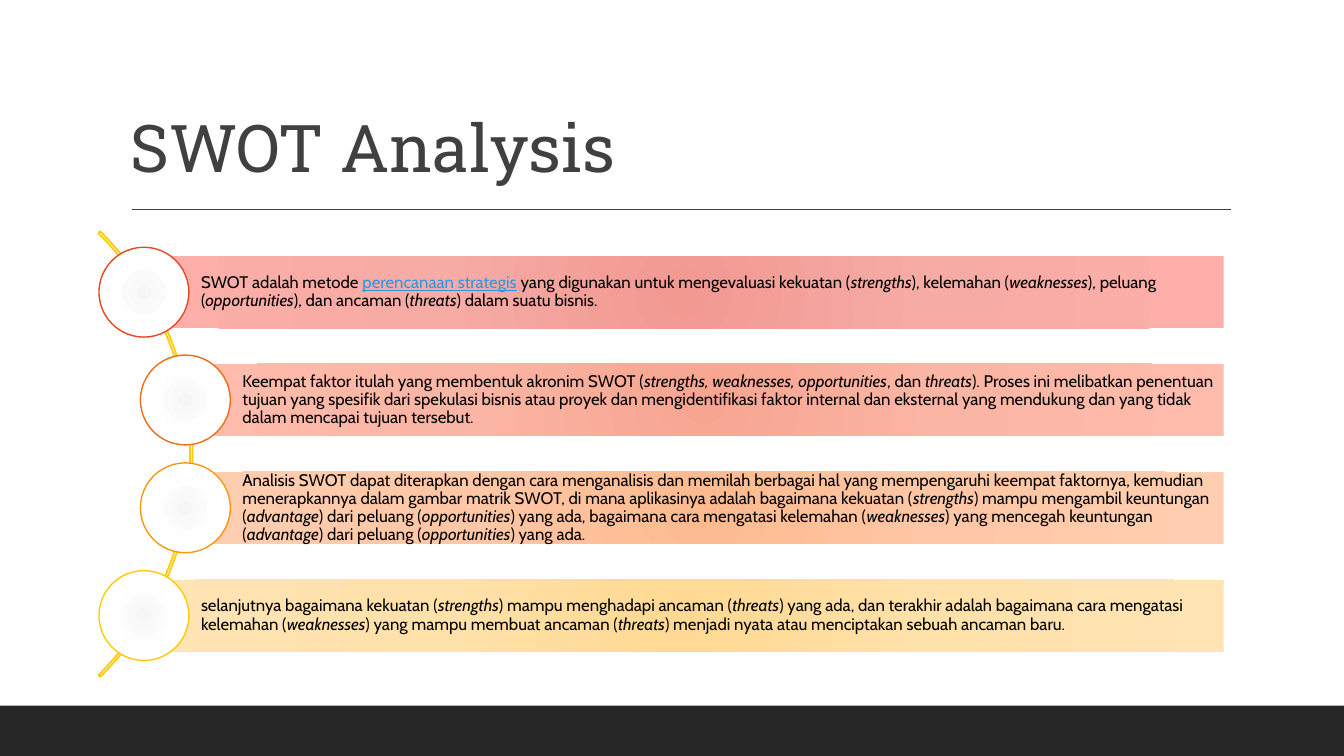
from lxml import etree
from pptx import Presentation
from pptx.dml.color import RGBColor
from pptx.enum.shapes import MSO_CONNECTOR, MSO_SHAPE
from pptx.enum.text import MSO_ANCHOR, PP_ALIGN
from pptx.oxml import parse_xml
from pptx.oxml.ns import qn
from pptx.util import Pt

RECTANGLE = MSO_SHAPE.RECTANGLE
OVAL = MSO_SHAPE.OVAL
BLOCK_ARC = MSO_SHAPE.BLOCK_ARC
STRAIGHT = MSO_CONNECTOR.STRAIGHT
MIDDLE = MSO_ANCHOR.MIDDLE
BOTTOM = MSO_ANCHOR.BOTTOM
LEFT = PP_ALIGN.LEFT

COLORS = {
    "footer": "262626",
    "title": "404040",
    "text": "000000",
    "link": "2998E3",
    "arc": "FFCA08",
}
CIRCLE_GRADIENT = ("F6F6F6", "FEFEFE", "FFFFFF")
LINKED_TERM = "perencanaan strategis"
BAR_RIGHT, BAR_TOP, BAR_HEIGHT, BAR_STEP = 874, 183, 51.4, 77
OUTER_LEFT, INNER_LEFT = 102.8, 132.4
CIRCLE_SIZE = 64.2

STEPS = [
    (OUTER_LEFT, "E64823", ("F29992", "F6ABA5", "FEAFA9"),
     "SWOT adalah metode *perencanaan strategis* yang digunakan untuk mengevaluasi kekuatan "
     "(*strengths*), kelemahan (*weaknesses*), peluang (*opportunities*), dan ancaman "
     "(*threats*) dalam suatu bisnis."),
    (INNER_LEFT, "EE6C1A", ("F7A591", "FBB5A4", "FFBBAC"),
     "Keempat faktor itulah yang membentuk akronim SWOT (*strengths, weaknesses, "
     "opportunities*, dan *threats*). Proses ini melibatkan penentuan tujuan yang spesifik "
     "dari spekulasi bisnis atau proyek dan mengidentifikasi faktor internal dan eksternal "
     "yang mendukung dan yang tidak dalam mencapai tujuan tersebut."),
    (INNER_LEFT, "F79811", ("FDBA8F", "FFC7A5", "FFCEB0"),
     "Analisis SWOT dapat diterapkan dengan cara menganalisis dan memilah berbagai hal yang "
     "mempengaruhi keempat faktornya, kemudian menerapkannya dalam gambar matrik SWOT, di mana "
     "aplikasinya adalah bagaimana kekuatan (*strengths*) mampu mengambil keuntungan "
     "(*advantage*) dari peluang (*opportunities*) yang ada, bagaimana cara mengatasi kelemahan "
     "(*weaknesses*) yang mencegah keuntungan (*advantage*) dari peluang (*opportunities*) "
     "yang ada."),
    (OUTER_LEFT, "FFCA08", ("FFD993", "FFE1A9", "FFE4B4"),
     "selanjutnya bagaimana kekuatan (*strengths*) mampu menghadapi ancaman (*threats*) yang "
     "ada, dan terakhir adalah bagaimana cara mengatasi kelemahan (*weaknesses*) yang mampu "
     "membuat ancaman (*threats*) menjadi nyata atau menciptakan sebuah ancaman baru."),
]

presentation = Presentation()
presentation.slide_width = Pt(960)
presentation.slide_height = Pt(540)
slide = presentation.slides.add_slide(presentation.slide_layouts[6])


def add_plain_shape(kind, left, top, width, height, line_color=None, line_width=1):
    shape = slide.shapes.add_shape(kind, Pt(left), Pt(top), Pt(width), Pt(height))
    shape.shadow.inherit = False
    if line_color:
        shape.line.color.rgb = RGBColor.from_string(line_color)
        shape.line.width = Pt(line_width)
    else:
        shape.line.fill.background()
    return shape


def set_radial_fill(shape, colors):
    stops = "".join(
        f'<a:gs pos="{position}"><a:srgbClr val="{color}"/></a:gs>'
        for position, color in zip((0, 45000, 100000), colors)
    )
    gradient = parse_xml(
        '<a:gradFill xmlns:a="http://schemas.openxmlformats.org/drawingml/2006/main">'
        f'<a:gsLst>{stops}</a:gsLst><a:path path="circle">'
        '<a:fillToRect l="100000" t="100000" r="100000" b="100000"/></a:path></a:gradFill>'
    )
    shape.element.spPr.find(qn("a:prstGeom")).addnext(gradient)


footer = add_plain_shape(RECTANGLE, 0, 504, 960, 36)
footer.fill.solid()
footer.fill.fore_color.rgb = RGBColor.from_string(COLORS["footer"])

title_rule = slide.shapes.add_connector(STRAIGHT, Pt(94.3), Pt(149.5), Pt(879), Pt(149.5))
title_rule.line.color.rgb = RGBColor.from_string(COLORS["title"])
title_rule.line.width = Pt(1)
etree.SubElement(title_rule.element.spPr, qn("a:effectLst"))

title = slide.shapes.add_textbox(Pt(86.4), Pt(22.3), Pt(792), Pt(114.5))
title.text_frame.word_wrap = True
title.text_frame.vertical_anchor = BOTTOM
title.text_frame.text = "SWOT Analysis"
paragraph = title.text_frame.paragraphs[0]
paragraph.line_spacing = 0.9
run = paragraph.runs[0]
run.font.name = "Roboto Slab"
run.font.size = Pt(47)
run.font.color.rgb = RGBColor.from_string(COLORS["title"])
run.font.element.set("spc", "-50") if hasattr(run.font, "element") else None

arc = add_plain_shape(BLOCK_ARC, -312.5, 99.4, 450, 450, COLORS["arc"], 1.25)
arc.fill.background()
for index, adjustment in enumerate((189, 27, 0.004)):
    arc.adjustments[index] = adjustment

for index, (left, outline, gradient_colors, text) in enumerate(STEPS):
    top = BAR_TOP + index * BAR_STEP
    bar = add_plain_shape(RECTANGLE, left, top, BAR_RIGHT - left, BAR_HEIGHT)
    set_radial_fill(bar, gradient_colors)

    frame = bar.text_frame
    frame.word_wrap = True
    frame.vertical_anchor = MIDDLE
    frame.margin_left = Pt(40.8)
    frame.margin_top = frame.margin_right = frame.margin_bottom = Pt(2.4)
    paragraph = frame.paragraphs[0]
    paragraph.alignment = LEFT
    paragraph.line_spacing = 0.9
    for position, part in enumerate(text.split("*")):
        linked = part == LINKED_TERM
        run = paragraph.add_run()
        run.text = part
        run.font.name = "Cabin"
        run.font.size = Pt(12)
        run.font.italic = position % 2 == 1 and not linked
        run.font.underline = linked
        run.font.color.rgb = RGBColor.from_string(COLORS["link" if linked else "text"])

    circle = add_plain_shape(
        OVAL, left - CIRCLE_SIZE / 2, top + (BAR_HEIGHT - CIRCLE_SIZE) / 2,
        CIRCLE_SIZE, CIRCLE_SIZE, outline,
    )
    set_radial_fill(circle, CIRCLE_GRADIENT)

presentation.save("out.pptx")
